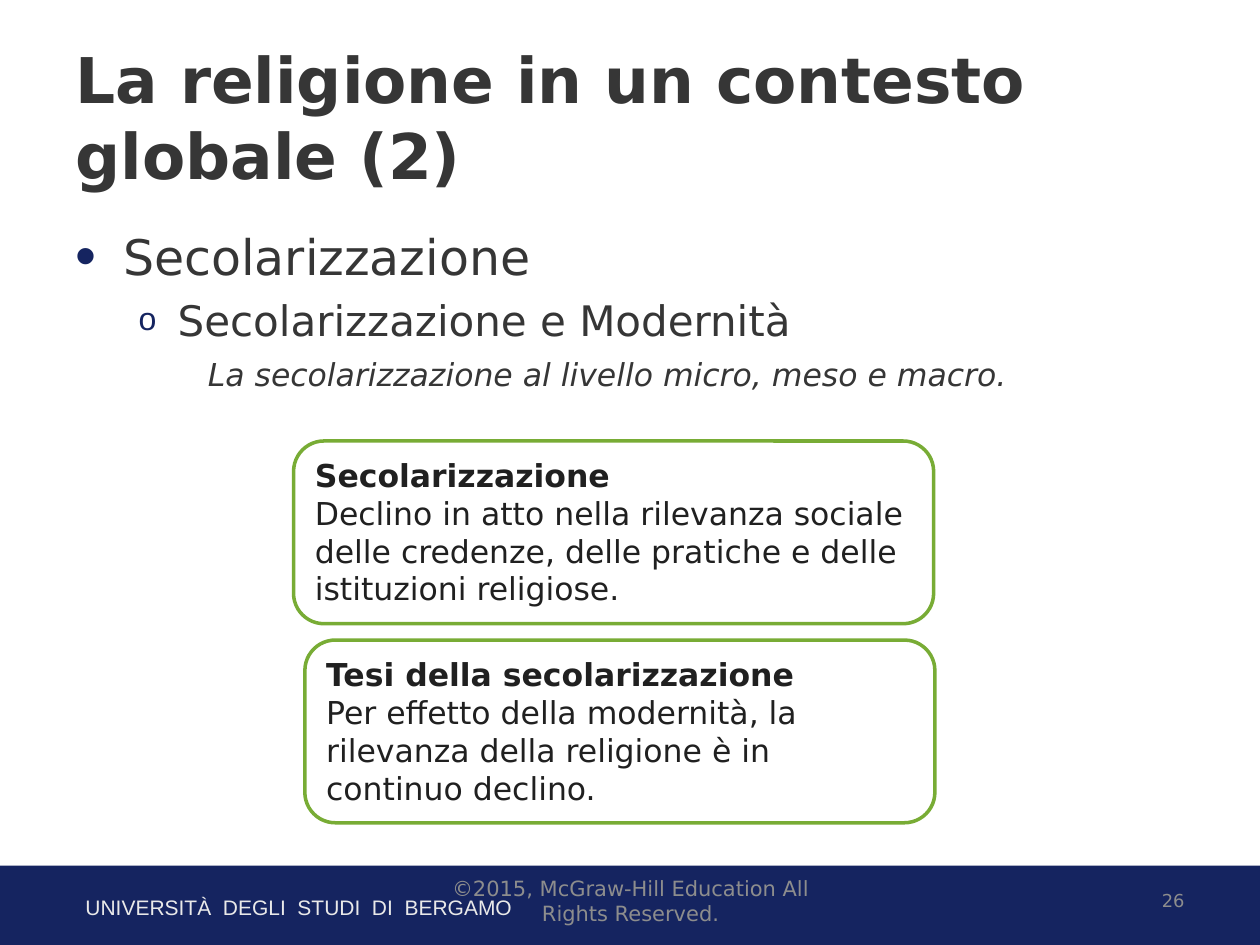
"""Build the slide on religion in a global context."""
from lxml import etree
from pptx import Presentation
from pptx.dml.color import RGBColor
from pptx.enum import shapes, text
from pptx.oxml import ns
from pptx.util import Inches, Pt

FONT = "DejaVu Sans"
NAVY, GREEN, WHITE = "152460", "78AC35", "FFFFFF"
DARK, BLACK, GREY, PALE = "363636", "202020", "8D8D8D", "E9E9E9"


def color(value):
    """Turn a hex string into a colour."""
    return RGBColor.from_string(value)


def place(shape, left, top, width, height):
    """Move and size a shape, in inches."""
    shape.left, shape.top = Inches(left), Inches(top)
    shape.width, shape.height = Inches(width), Inches(height)


def set_bullet(paragraph, margin, indent, char=None, size=100):
    """Set the indents and the bullet, or remove the bullet if no char is given."""
    properties = paragraph._p.get_or_add_pPr()
    properties.set("marL", str(Inches(margin)))
    properties.set("indent", str(Inches(indent)))
    if char is None:
        etree.SubElement(properties, ns.qn("a:buNone"))
        return
    bullet_color = etree.SubElement(properties, ns.qn("a:buClr"))
    etree.SubElement(bullet_color, ns.qn("a:srgbClr"), val=NAVY)
    etree.SubElement(properties, ns.qn("a:buSzPct"), val=str(size * 1000))
    etree.SubElement(properties, ns.qn("a:buFont"), typeface="Arial")
    etree.SubElement(properties, ns.qn("a:buChar"), char=char)


def write(paragraph, content, size, fill=DARK, font=FONT, bold=False, italic=False,
          align=text.PP_ALIGN.LEFT, before=0, after=0):
    """Write formatted text into a paragraph."""
    paragraph.alignment = align
    paragraph.space_before, paragraph.space_after = Pt(before), Pt(after)
    run = paragraph.add_run()
    run.text = content
    run.font.name, run.font.size = font, Pt(size)
    run.font.bold, run.font.italic = bold, italic
    run.font.color.rgb = color(fill)


def add_label(slide, box, content, size, anchor=text.MSO_ANCHOR.MIDDLE, **style):
    """Add a text box with one paragraph."""
    label = slide.shapes.add_textbox(*map(Inches, box))
    frame = label.text_frame
    frame.word_wrap, frame.vertical_anchor = True, anchor
    write(frame.paragraphs[0], content, size, **style)


def add_footer_bar(slide):
    """Add the coloured bar at the foot of the slide."""
    bar = slide.shapes.add_shape(shapes.MSO_SHAPE.RECTANGLE,
                                 *map(Inches, (0, 6.87, 10, 0.68)))
    bar.shadow.inherit = False
    bar.fill.solid()
    bar.fill.fore_color.rgb = color(NAVY)
    bar.line.fill.background()


def add_definition(slide, box, term, meaning):
    """Add a rounded box with a term and its meaning."""
    shape = slide.shapes.add_shape(shapes.MSO_SHAPE.ROUNDED_RECTANGLE, *map(Inches, box))
    shape.shadow.inherit = False
    shape.fill.solid()
    shape.fill.fore_color.rgb = color(WHITE)
    shape.line.color.rgb = color(GREEN)
    shape.line.width = Pt(2)
    frame = shape.text_frame
    frame.word_wrap, frame.vertical_anchor = True, text.MSO_ANCHOR.TOP
    write(frame.paragraphs[0], term, 18, fill=BLACK, bold=True)
    write(frame.add_paragraph(), meaning, 18, fill=BLACK)


def fill_title(slide, content):
    """Fill the title placeholder."""
    title = slide.shapes.title
    place(title, 0.5, 0.3, 9, 1.25)
    frame = title.text_frame
    frame.auto_size = text.MSO_AUTO_SIZE.NONE
    frame.vertical_anchor = text.MSO_ANCHOR.MIDDLE
    write(frame.paragraphs[0], content, 36, bold=True)


def fill_outline(slide):
    """Fill the body placeholder with the three-level outline."""
    body = slide.placeholders[1]
    place(body, 0.5, 1.75, 9, 4.95)
    frame = body.text_frame
    frame.auto_size = text.MSO_AUTO_SIZE.NONE
    topic, subtopic, detail = frame.paragraphs[0], frame.add_paragraph(), frame.add_paragraph()
    subtopic.level, detail.level = 1, 2
    set_bullet(topic, 0.38, -0.38, "•", 122)
    set_bullet(subtopic, 0.81, -0.31, "o", 76)
    set_bullet(detail, 1.05, 0)
    write(topic, "Secolarizzazione", 28)
    write(subtopic, "Secolarizzazione e Modernità", 24, before=4.8)
    write(detail, "La secolarizzazione al livello micro, meso e macro.", 18, italic=True,
          align=text.PP_ALIGN.JUSTIFY, before=6, after=6)


def main():
    """Build and save the presentation."""
    presentation = Presentation()
    presentation.slide_width, presentation.slide_height = Inches(10), Inches(7.5)
    slide = presentation.slides.add_slide(presentation.slide_layouts[1])
    add_footer_bar(slide)
    add_label(slide, (0.58, 7.05, 5.82, 0.3), "UNIVERSITÀ  DEGLI  STUDI  DI  BERGAMO", 12,
              anchor=text.MSO_ANCHOR.TOP, fill=PALE, font="Arial")
    fill_title(slide, "La religione in un contesto globale (2)")
    fill_outline(slide)
    add_label(slide, (7.17, 6.95, 2.33, 0.4), "26", 10.2, fill=GREY,
              align=text.PP_ALIGN.RIGHT)
    add_definition(slide, (2.33, 3.5, 5.08, 1.45), "Secolarizzazione",
                   "Declino in atto nella rilevanza sociale delle credenze, "
                   "delle pratiche e delle istituzioni religiose.")
    add_definition(slide, (2.42, 5.08, 5, 1.45), "Tesi della secolarizzazione",
                   "Per effetto della modernità, la rilevanza della religione "
                   "è in continuo declino.")
    add_label(slide, (3.42, 6.95, 3.17, 0.4),
              "©2015, McGraw-Hill Education All Rights Reserved.", 12, fill=GREY,
              align=text.PP_ALIGN.CENTER)
    presentation.save("out.pptx")


if __name__ == "__main__":
    main()
